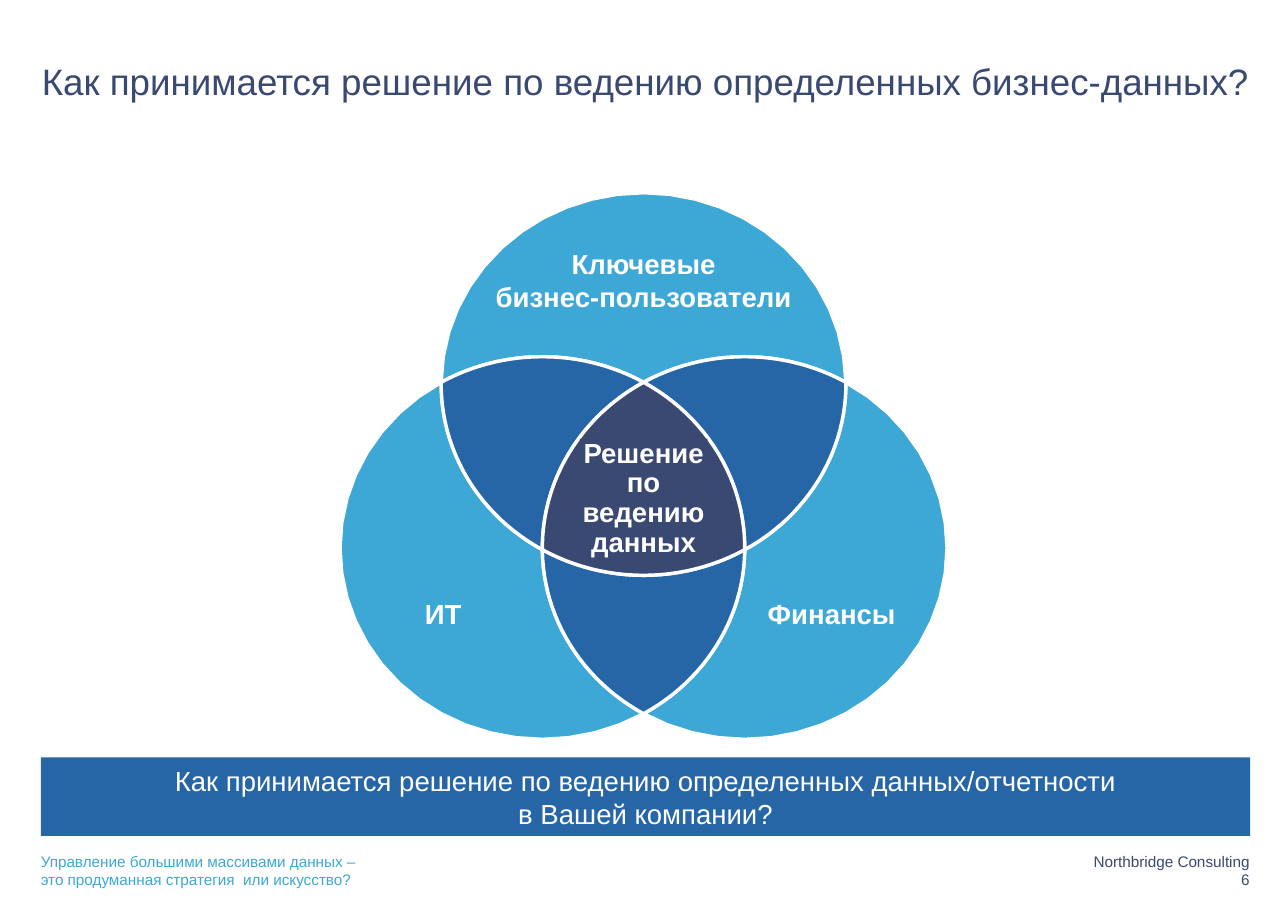
import math
from dataclasses import dataclass

import pptx
import pptx.dml.color
import pptx.enum.shapes
import pptx.enum.text
import pptx.util

ALIGN = pptx.enum.text.PP_ALIGN
ANCHOR = pptx.enum.text.MSO_ANCHOR
RECTANGLE = pptx.enum.shapes.MSO_SHAPE.RECTANGLE


@dataclass(frozen=True)
class Theme:
    font: str = "Arial"
    white: str = "FFFFFF"
    sky: str = "3DA8D5"
    blue: str = "2666A6"
    navy: str = "3A4972"
    title: int = 24
    body: int = 18
    footer: int = 10
    outline: float = 2.25


THEME = Theme()
WIDTH = pptx.util.Inches(11.69)
HEIGHT = pptx.util.Inches(8.27)
COL = WIDTH / 100
ROW = HEIGHT / 100
ARC_STEPS = 24

REGIONS = [
    ("sky", [("top", 181, 359), ("right", 300, 240), ("left", 300, 240)]),
    ("sky", [("left", 60, 240), ("top", 181, 120), ("right", 179, 120)]),
    ("blue", [("top", 120, 181), ("left", 240, 300), ("right", 240, 179)]),
    ("sky", [("right", -60, 120), ("left", 60, 1), ("top", 60, -1)]),
    ("blue", [("left", 300, 361), ("top", 60, -1), ("right", 300, 240)]),
    ("blue", [("top", 60, 120), ("right", 179, 120), ("left", 60, 1)]),
    ("navy", [("left", 300, 361), ("top", 60, 120), ("right", 179, 240)]),
]

LABELS = [
    ("Финансы", 0.81, 0.77, 0.3),
    ("ИТ", 0.17, 0.77, 0.16),
    ("Ключевые\nбизнес-пользователи", 0.5, 0.16, 0.56),
]


def color(name):
    return pptx.dml.color.RGBColor.from_string(getattr(THEME, name))


def grid_box(col, row, cols, rows):
    return [round(v) for v in (col * COL, row * ROW, cols * COL, rows * ROW)]


def paint(sp, fill):
    sp.shadow.inherit = False
    sp.fill.solid()
    sp.fill.fore_color.rgb = color(fill)


def add_panel(s, box, fill):
    sp = s.shapes.add_shape(RECTANGLE, *box)
    paint(sp, fill)
    sp.line.fill.background()
    return sp


def write(sp, text, size, ink, align=ALIGN.LEFT, anchor=ANCHOR.TOP,
          bold=False, spacing=1):
    tf = sp.text_frame
    tf.text = text
    tf.word_wrap = True
    tf.vertical_anchor = anchor
    tf.margin_left = tf.margin_right = tf.margin_top = tf.margin_bottom = 0
    for p in tf.paragraphs:
        p.alignment = align
        p.line_spacing = spacing
        for r in p.runs:
            r.font.name = THEME.font
            r.font.size = pptx.util.Pt(size)
            r.font.bold = bold
            r.font.color.rgb = color(ink)


def add_title(s, box):
    write(s.shapes.add_textbox(*box),
          "Как принимается решение по ведению определенных бизнес-данных?",
          THEME.title, "navy")


def add_venn(s, box):
    x, y, w, h = box
    rx = w / 3
    ry = h * 0.35
    centers = {
        "top": (x + w / 2, y + ry),
        "left": (x + rx, y + h - ry),
        "right": (x + w - rx, y + h - ry),
    }

    def arc(circle, start, end):
        cx, cy = centers[circle]
        for i in range(ARC_STEPS + 1):
            a = math.radians(start + (end - start) * i / ARC_STEPS)
            yield round(cx + rx * math.cos(a)), round(cy + ry * math.sin(a))

    def label_box(across, down, share):
        return [round(v) for v in (x + w * (across - share / 2),
                                   y + h * (down - 0.11), w * share, h * 0.22)]

    for fill, arcs in REGIONS:
        points = [point for part in arcs for point in arc(*part)]
        outline = s.shapes.build_freeform(*points[0])
        outline.add_line_segments(points[1:], close=True)
        sp = outline.convert_to_shape()
        paint(sp, fill)
        sp.line.color.rgb = color("white")
        sp.line.width = pptx.util.Pt(THEME.outline)

    write(add_panel(s, label_box(0.5, 0.56, 0.21), "navy"),
          "Решение\nпо\nведению\nданных", THEME.body, "white",
          ALIGN.CENTER, ANCHOR.MIDDLE, bold=True, spacing=0.9)
    for text, across, down, share in LABELS:
        write(s.shapes.add_textbox(*label_box(across, down, share)), text,
              THEME.body, "white", ALIGN.CENTER, ANCHOR.MIDDLE, bold=True)


def add_banner(s, box):
    write(add_panel(s, box, "blue"),
          "Как принимается решение по ведению определенных данных/отчетности\n"
          "в Вашей компании?", THEME.body, "white", ALIGN.CENTER, ANCHOR.MIDDLE)


def add_footer(s, box):
    x, y, w, h = box
    half = w // 2
    write(s.shapes.add_textbox(x, y, half, h),
          "Управление большими массивами данных –\n"
          "это продуманная стратегия  или искусство?",
          THEME.footer, "sky", anchor=ANCHOR.BOTTOM)
    write(s.shapes.add_textbox(x + half, y, half, h),
          "Northbridge Consulting\n6",
          THEME.footer, "navy", ALIGN.RIGHT, ANCHOR.BOTTOM)


def main():
    prs = pptx.Presentation()
    prs.slide_width, prs.slide_height = WIDTH, HEIGHT
    s = prs.slides.add_slide(prs.slide_layouts[6])
    add_footer(s, grid_box(3.17, 94.05, 93.84, 3.5))
    add_title(s, grid_box(3.25, 6.4, 95, 11))
    add_banner(s, grid_box(3.17, 83.15, 93.9, 8.6))
    add_venn(s, grid_box(26.4, 21.16, 47.13, 60))
    prs.save("out.pptx")


if __name__ == "__main__":
    main()
